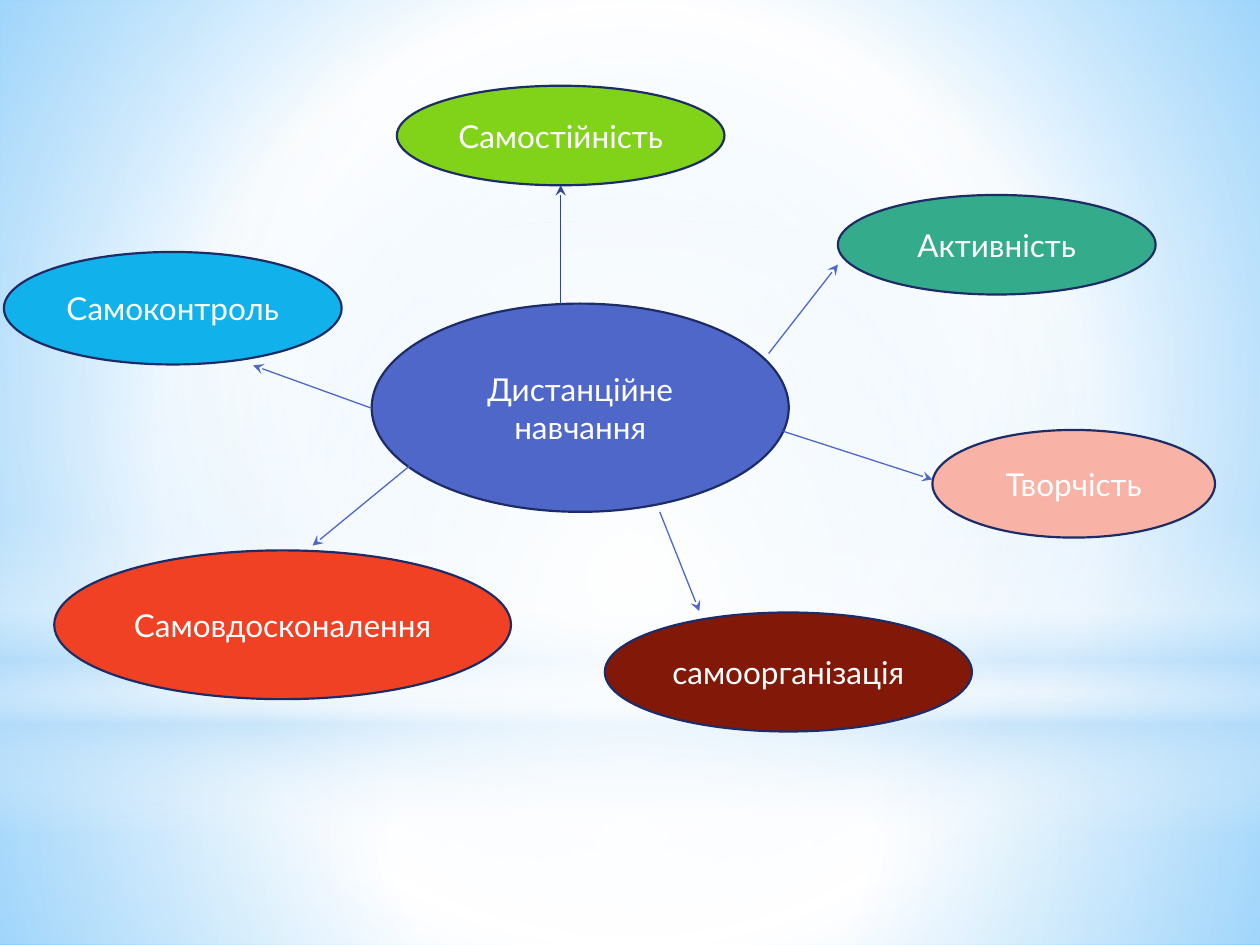
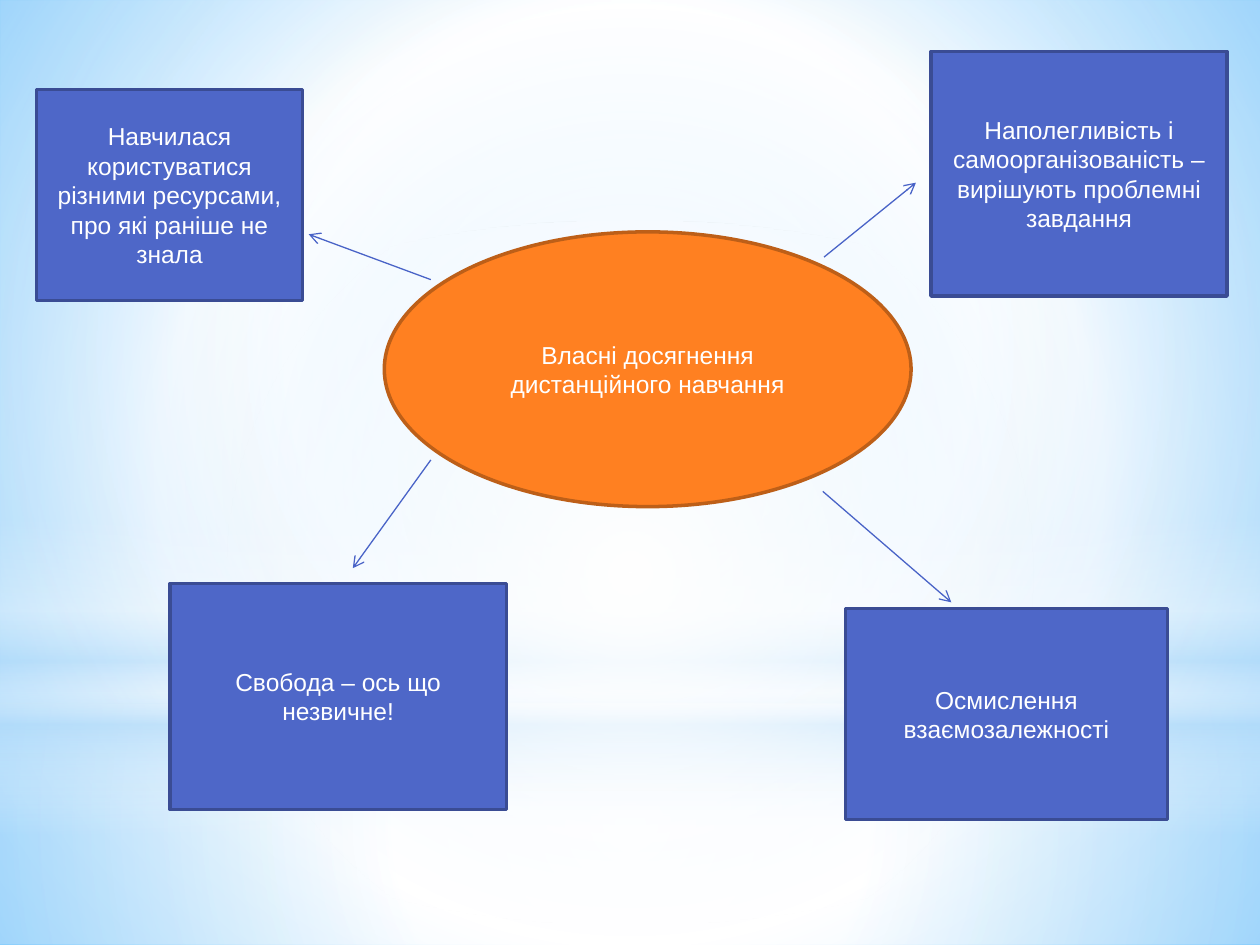
"""Build two mind-map slides about distance learning on a soft blue background."""
from lxml import etree
from pptx import Presentation
from pptx import util as u
from pptx.dml.color import RGBColor
from pptx.enum import shapes, text
from pptx.oxml.ns import qn

Pt = u.Pt
OVAL, RECTANGLE = shapes.MSO_SHAPE.OVAL, shapes.MSO_SHAPE.RECTANGLE

WHITE = RGBColor(0xFF, 0xFF, 0xFF)
SKY = RGBColor(0x99, 0xD4, 0xFE)
DEEP_SKY = RGBColor(0x54, 0xBD, 0xFF)
MIST = RGBColor(0xB4, 0xDC, 0xFA)
BLUE = RGBColor(0x4E, 0x67, 0xC8)
ARROW_BLUE = RGBColor(0x49, 0x63, 0xC7)
DARK_BLUE = RGBColor(0x31, 0x47, 0x9F)
BOX_EDGE = RGBColor(0x3A, 0x4C, 0x94)
NAVY = RGBColor(0x1D, 0x2C, 0x66)
LIME = RGBColor(0x81, 0xD3, 0x19)
TEAL = RGBColor(0x34, 0xAC, 0x8B)
PINK = RGBColor(0xF9, 0xB2, 0xA6)
MAROON = RGBColor(0x82, 0x19, 0x08)
CYAN = RGBColor(0x11, 0xB2, 0xEB)
RED = RGBColor(0xF1, 0x41, 0x24)
ORANGE = RGBColor(0xFF, 0x80, 0x21)
ORANGE_EDGE = RGBColor(0xBD, 0x5F, 0x18)


def set_gradient(properties, stops, radial=True):
    """Replace the solid fill of the properties element with a gradient."""
    gradient = etree.Element(qn("a:gradFill"), rotWithShape="1")
    stop_list = etree.SubElement(gradient, qn("a:gsLst"))
    for position, color, opacity in stops:
        stop = etree.SubElement(stop_list, qn("a:gs"), pos=str(position * 1000))
        value = etree.SubElement(stop, qn("a:srgbClr"), val=str(color))
        if opacity < 100:
            etree.SubElement(value, qn("a:alpha"), val=str(opacity * 1000))
    if radial:
        focus = etree.SubElement(gradient, qn("a:path"), path="circle")
        sides = dict.fromkeys("ltrb", "50000")
        etree.SubElement(focus, qn("a:fillToRect"), **sides)
    else:
        etree.SubElement(gradient, qn("a:lin"), ang="5400000", scaled="0")
    properties.replace(properties.find(qn("a:solidFill")), gradient)


def add_shape(slide, kind, box, fill, edge=None, width=0):
    """Add a flat shape with a solid fill and an optional outline."""
    shape = slide.shapes.add_shape(kind, *map(Pt, box))
    shape.shadow.inherit = False
    shape.fill.solid()
    shape.fill.fore_color.rgb = fill
    if edge is None:
        shape.line.fill.background()
    else:
        shape.line.color.rgb = edge
        shape.line.width = Pt(width)
    return shape


presentation = Presentation()
presentation.slide_width, presentation.slide_height = Pt(720), Pt(540)
master = presentation.slide_master
blank_layout = presentation.slide_layouts[6]

DIAGRAMS = [
    {
        "font": {"name": "Lato", "size": Pt(18)}, "edge_width": 1.25, "arrowhead": "stealth",
        "nodes": [
            (OVAL, (212.4, 173.5, 238.3, 119), BLUE, NAVY, "Дистанційне навчання"),
            (OVAL, (226.8, 49, 187.2, 56.9), LIME, NAVY, "Самостійність"),
            (OVAL, (478.8, 111.4, 181.6, 56.9), TEAL, NAVY, "Активність"),
            (OVAL, (532.8, 245.7, 161.5, 61.5), PINK, NAVY, "Творчість"),
            (OVAL, (345.6, 350, 209.8, 68), MAROON, NAVY, "самоорганізація"),
            (OVAL, (2.2, 144, 193, 64.3), CYAN, NAVY, "Самоконтроль"),
            (OVAL, (31, 314.5, 261, 85), RED, NAVY, "Самовдосконалення"),
        ],
        "arrows": [
            ((320.4, 173.5, 320.4, 105.9), DARK_BLUE),
            ((439.2, 202, 478.8, 151.2), BLUE),
            ((447.6, 246.5, 532.8, 274), BLUE),
            ((377, 292.5, 399.6, 349.2), BLUE),
            ((235, 265.5, 178.6, 311.8), BLUE),
            ((212.4, 233.3, 144.7, 208.8), BLUE),
        ],
    },
    {
        "font": {"name": "Arial", "size": Pt(14)}, "edge_width": 2, "arrowhead": "arrow",
        "nodes": [
            (OVAL, (219.6, 132.5, 301, 157), ORANGE, ORANGE_EDGE,
             "Власні досягнення дистанційного навчання"),
            (RECTANGLE, (97.2, 333.4, 192.2, 129.2), BLUE, BOX_EDGE,
             "Свобода – ось що незвичне!"),
            (RECTANGLE, (483.1, 347.8, 184, 120.5), BLUE, BOX_EDGE,
             "Осмислення взаємозалежності"),
            (RECTANGLE, (20.9, 51.1, 152, 120.5), BLUE, BOX_EDGE,
             "Навчилася користуватися різними ресурсами, про які раніше не знала"),
            (RECTANGLE, (532, 29.5, 169.2, 139.7), BLUE, BOX_EDGE,
             "Наполегливість і самоорганізованість –вирішують проблемні завдання"),
        ],
        "arrows": [
            ((246.2, 262.8, 201.6, 324.7), ARROW_BLUE),
            ((470.2, 280.8, 543.6, 344.2), ARROW_BLUE),
            ((246.2, 159.8, 176.4, 133.9), ARROW_BLUE),
            ((470.9, 146.9, 523.4, 104.4), ARROW_BLUE),
        ],
    },
]

slides = [presentation.slides.add_slide(blank_layout) for diagram in DIAGRAMS]

master.background.fill.solid()
set_gradient(master.element.find(".//" + qn("p:bgPr")),
             [(0, SKY, 100), (60, WHITE, 100), (100, DEEP_SKY, 100)])

GLOWS = [
    (RECTANGLE, (0, 402, 720, 138), True,
     [(0, WHITE, 91), (37, WHITE, 76), (100, MIST, 79)]),
    (RECTANGLE, (0, 0, 720, 402), True,
     [(0, WHITE, 89), (48, WHITE, 62), (100, MIST, 79)]),
    (RECTANGLE, (0, 296.6, 720, 180), False,
     [(0, WHITE, 0), (29, WHITE, 30), (45, MIST, 40),
      (55, WHITE, 26), (65, MIST, 60), (100, WHITE, 0)]),
    (OVAL, (0, 126, 720, 402), True,
     [(0, WHITE, 100), (56, WHITE, 0), (100, WHITE, 0)]),
]
for index, (kind, box, radial, stops) in enumerate(GLOWS):
    glow = add_shape(slides[0], kind, box, WHITE)
    set_gradient(glow.element.spPr, stops, radial)
    master.shapes.element.insert(2 + index, glow.element)

for slide, diagram in zip(slides, DIAGRAMS):
    for kind, box, fill, edge, label in diagram["nodes"]:
        node = add_shape(slide, kind, box, fill, edge, diagram["edge_width"])
        node.text_frame.word_wrap = True
        node.text_frame.vertical_anchor = text.MSO_ANCHOR.MIDDLE
        paragraph = node.text_frame.paragraphs[0]
        paragraph.alignment = text.PP_ALIGN.CENTER
        run = paragraph.add_run()
        run.text = label
        run.font.color.rgb = WHITE
        for attribute, value in diagram["font"].items():
            setattr(run.font, attribute, value)

    for ends, color in diagram["arrows"]:
        arrow = slide.shapes.add_connector(shapes.MSO_CONNECTOR.STRAIGHT, *map(Pt, ends))
        arrow.line.color.rgb = color
        arrow.line.width = Pt(0.75)
        etree.SubElement(arrow.line._get_or_add_ln(), qn("a:tailEnd"), type=diagram["arrowhead"])
        etree.SubElement(arrow.element.spPr, qn("a:effectLst"))

presentation.save("out.pptx")
